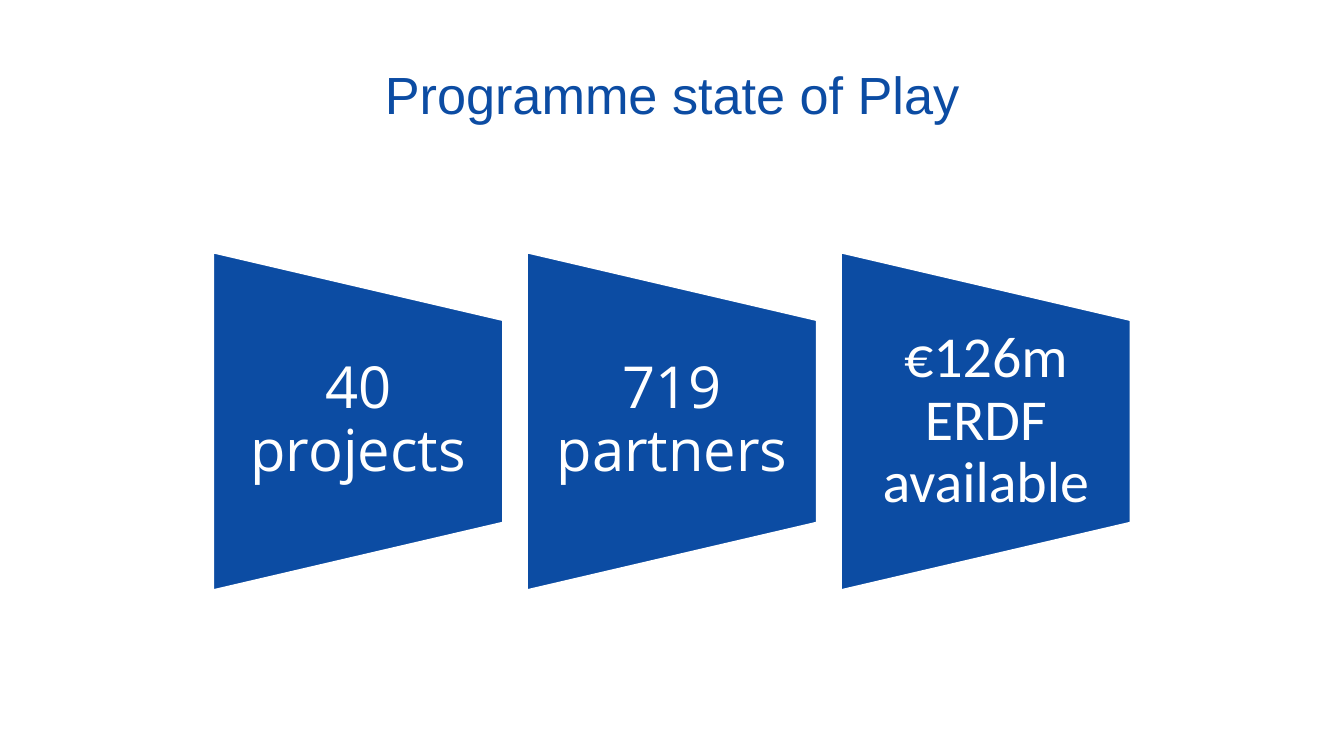
from pptx import Presentation
from pptx.dml.color import RGBColor
from pptx.enum.shapes import MSO_SHAPE as Shape
from pptx.enum.text import MSO_ANCHOR as Anchor, PP_ALIGN as Align
from pptx.util import Inches, Pt

BLUE = "0C4CA3"
WHITE = "FFFFFF"
FIGURES = [
    ("40 projects", "Open Sans"),
    ("719 partners", "Open Sans"),
    ("€126m ERDF\vavailable", "Calibri"),
]


def color(hex_value):
    return RGBColor.from_string(hex_value)


def place(shape, left, top, width, height):
    shape.left, shape.top = Inches(left), Inches(top)
    shape.width, shape.height = Inches(width), Inches(height)


def format_text(text_frame, font_name, size, hex_value):
    text_frame.word_wrap = True
    text_frame.vertical_anchor = Anchor.MIDDLE
    for paragraph in text_frame.paragraphs:
        paragraph.alignment = Align.CENTER
        for run in paragraph.runs:
            run.font.name = font_name
            run.font.size = Pt(size)
            run.font.color.rgb = color(hex_value)


def add_title(slide, text, left, top, width, height):
    title = slide.shapes.title
    place(title, left, top, width, height)
    title.text_frame.text = text
    format_text(title.text_frame, "Arial", 28, BLUE)


def add_panel(shapes, text, font_name, left, top, width, height):
    # Trapezoid turned on its side, so its frame has width and height swapped
    offset = (height - width) / 2
    panel = shapes.add_shape(
        Shape.FLOWCHART_MANUAL_OPERATION,
        Inches(left - offset), Inches(top + offset), Inches(height), Inches(width))
    panel.rotation = 270
    panel.shadow.inherit = False
    panel.fill.solid()
    panel.fill.fore_color.rgb = color(BLUE)
    panel.line.color.rgb = color(WHITE)
    panel.line.width = Pt(2)

    # Upright label in the middle three fifths of the panel
    label = shapes.add_textbox(
        Inches(left), Inches(top + height / 5), Inches(width), Inches(height * 3 / 5))
    text_frame = label.text_frame
    text_frame.margin_left = text_frame.margin_right = Inches(0.22)
    text_frame.margin_top = text_frame.margin_bottom = 0
    text_frame.text = text
    text_frame.paragraphs[0].line_spacing = 0.9
    format_text(text_frame, font_name, 31, WHITE)


def add_figures(slide, figures, left, top, width, height, panel_width):
    group = slide.shapes.add_group_shape()
    step = (width - panel_width) / (len(figures) - 1)
    for index, (text, font_name) in enumerate(figures):
        add_panel(group.shapes, text, font_name,
                  left + index * step, top, panel_width, height)


def main():
    presentation = Presentation()
    # Widescreen, 16:9
    presentation.slide_width = Inches(10)
    presentation.slide_height = Inches(10 * 9 / 16)
    slide = presentation.slides.add_slide(presentation.slide_layouts[5])
    slide.background.fill.solid()
    slide.background.fill.fore_color.rgb = color(WHITE)

    add_title(slide, "Programme state of Play", 0.5, 0.23, 9, 0.94)
    add_figures(slide, FIGURES, 1.58, 1.87, 6.84, 2.53, panel_width=2.17)
    presentation.save("out.pptx")


if __name__ == "__main__":
    main()
